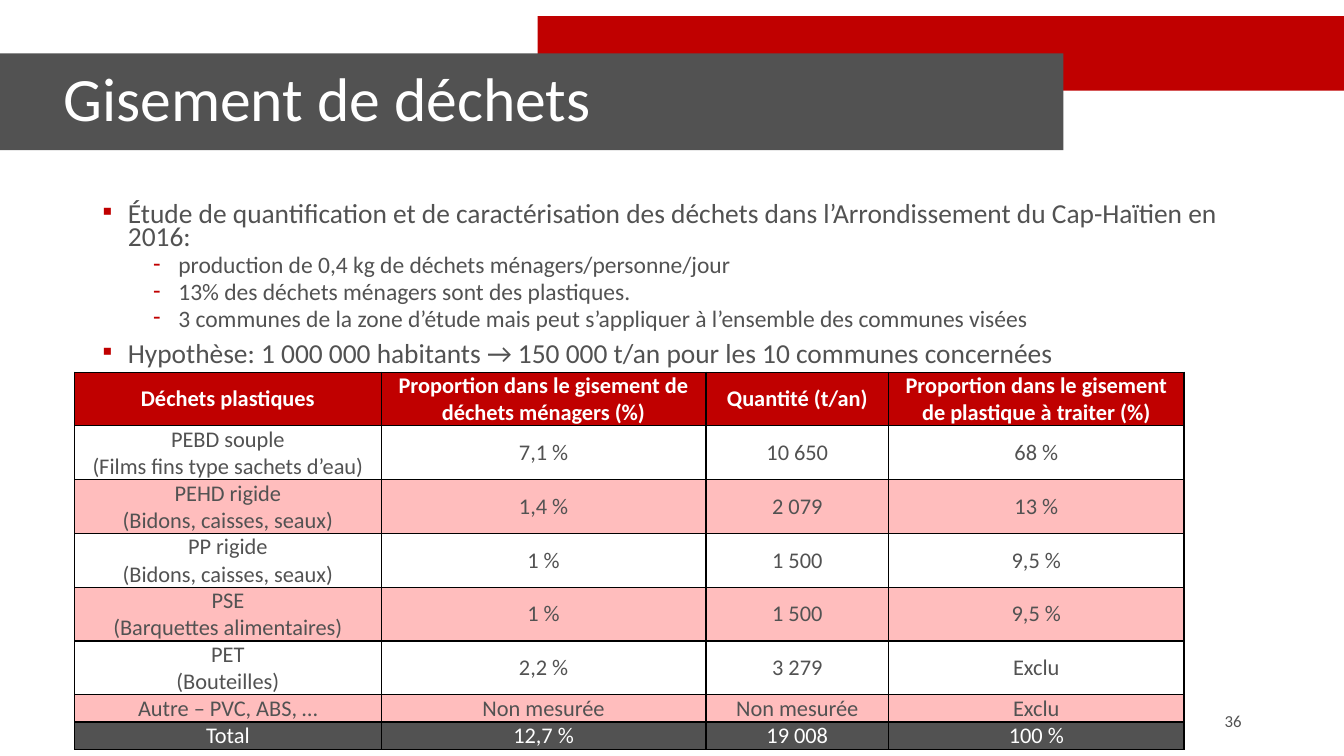
from lxml import etree
from pptx import Presentation
from pptx.dml.color import RGBColor
from pptx.enum import shapes, text
from pptx.oxml import ns
from pptx.util import Pt

RED = RGBColor(0xC0, 0x00, 0x00)
GREY = RGBColor(0x52, 0x52, 0x52)
PINK = RGBColor(0xFF, 0xBD, 0xBD)
WHITE = RGBColor(0xFF, 0xFF, 0xFF)
BLACK = RGBColor(0x00, 0x00, 0x00)
FONT = "Calibri"

TITLE = "Gisement de déchets"
PAGE_NUMBER = "36"
BULLETS = [
    (0, "Étude de quantification et de caractérisation des déchets dans l’Arrondissement du Cap-Haïtien en 2016:"),
    (1, "production de 0,4 kg de déchets ménagers/personne/jour"),
    (1, "13% des déchets ménagers sont des plastiques."),
    (1, "3 communes de la zone d’étude mais peut s’appliquer à l’ensemble des communes visées"),
    (0, "Hypothèse: 1 000 000 habitants → 150 000 t/an pour les 10 communes concernées"),
]
# Per level: bullet, left margin, font size, space before
LEVELS = [("▪", 18, 19.6, 10), ("‐", 54, 16.8, 5)]
WASTE_ROWS = [
    ("Déchets plastiques", "Proportion dans le gisement de déchets ménagers (%)",
     "Quantité (t/an)", "Proportion dans le gisement de plastique à traiter (%)"),
    ("PEBD souple\n(Films fins type sachets d’eau)", "7,1 %", "10 650", "68 %"),
    ("PEHD rigide\n(Bidons, caisses, seaux)", "1,4 %", "2 079", "13 %"),
    ("PP rigide\n(Bidons, caisses, seaux)", "1 %", "1 500", "9,5 %"),
    ("PSE\n(Barquettes alimentaires)", "1 %", "1 500", "9,5 %"),
    ("PET\n(Bouteilles)", "2,2 %", "3 279", "Exclu"),
    ("Autre – PVC, ABS, …", "Non mesurée", "Non mesurée", "Exclu"),
    ("Total", "12,7 %", "19 008", "100 %"),
]
COLUMN_WIDTHS = [219, 232, 130.5, 211]
ROW_HEIGHTS = [34.6] * 6 + [19.5] * 2
BARS = [(384, 11.5, 576, 53.3, RED), (0, 38.2, 759.6, 69.1, GREY)]


def place(shape, left, top, width, height):
    shape.left, shape.top = Pt(left), Pt(top)
    shape.width, shape.height = Pt(width), Pt(height)


def style(paragraph, size, color, bold=False):
    font = paragraph.font
    font.name, font.size, font.bold = FONT, Pt(size), bold
    font.color.rgb = color


def add_bullet(paragraph, character, margin):
    properties = paragraph._p.get_or_add_pPr()
    properties.set("marL", str(Pt(margin)))
    properties.set("indent", str(Pt(-18)))
    color = etree.SubElement(properties, ns.qn("a:buClr"))
    etree.SubElement(color, ns.qn("a:srgbClr"), val=str(RED))
    etree.SubElement(properties, ns.qn("a:buFont"), typeface=FONT)
    etree.SubElement(properties, ns.qn("a:buChar"), char=character)


def add_borders(cell):
    properties = cell._tc.get_or_add_tcPr()
    for index, side in enumerate(("lnL", "lnR", "lnT", "lnB")):
        line = etree.Element(ns.qn("a:" + side), w=str(Pt(1)))
        fill = etree.SubElement(line, ns.qn("a:solidFill"))
        etree.SubElement(fill, ns.qn("a:srgbClr"), val=str(BLACK))
        properties.insert(index, line)


def add_bars(slide):
    for *box, color in BARS:
        bar = slide.shapes.add_shape(shapes.MSO_SHAPE.RECTANGLE, *map(Pt, box))
        bar.shadow.inherit = False
        bar.fill.solid()
        bar.fill.fore_color.rgb = color
        bar.line.fill.background()
        slide.shapes.title.element.addprevious(bar.element)  # behind the title


def fill_title(title):
    place(title, 38.2, 25.2, 722, 95)
    frame = title.text_frame
    frame.text = TITLE
    frame.auto_size = text.MSO_AUTO_SIZE.NONE
    frame.vertical_anchor = text.MSO_ANCHOR.MIDDLE
    paragraph = frame.paragraphs[0]
    paragraph.alignment = text.PP_ALIGN.LEFT
    paragraph.line_spacing = 0.9
    style(paragraph, 44, WHITE)


def fill_body(body):
    place(body, 66.2, 142.6, 828, 134)
    frame = body.text_frame
    frame.text = "\n".join(line for _, line in BULLETS)
    frame.auto_size = text.MSO_AUTO_SIZE.NONE
    frame.vertical_anchor = text.MSO_ANCHOR.TOP
    for index, (paragraph, (level, _)) in enumerate(zip(frame.paragraphs, BULLETS)):
        character, margin, size, space = LEVELS[level]
        paragraph.level = level
        add_bullet(paragraph, character, margin)
        paragraph.line_spacing = 0.7
        paragraph.space_before = Pt(space if index else 0)
        style(paragraph, size, GREY)


def add_page_number(slide):
    box = slide.shapes.add_textbox(Pt(678), Pt(500.4), Pt(216), Pt(28.8))
    frame = box.text_frame
    frame.word_wrap = True
    frame.vertical_anchor = text.MSO_ANCHOR.MIDDLE
    frame.text = PAGE_NUMBER
    frame.paragraphs[0].alignment = text.PP_ALIGN.RIGHT
    style(frame.paragraphs[0], 12, GREY)


def row_colors(row):
    """Return the fill (None for no fill) and the text colour of a row."""
    if row == 0:
        return RED, WHITE
    if row == len(WASTE_ROWS) - 1:
        return GREY, WHITE
    return (None if row % 2 else PINK), GREY


def add_waste_table(slide):
    table = slide.shapes.add_table(
        len(WASTE_ROWS), len(COLUMN_WIDTHS), Pt(53.3), Pt(265.8),
        Pt(sum(COLUMN_WIDTHS)), Pt(sum(ROW_HEIGHTS))).table
    table.first_row = table.horz_banding = False
    for column, width in zip(table.columns, COLUMN_WIDTHS):
        column.width = Pt(width)
    for row, (values, height) in enumerate(zip(WASTE_ROWS, ROW_HEIGHTS)):
        table.rows[row].height = Pt(height)
        fill_color, text_color = row_colors(row)
        for column, value in enumerate(values):
            cell = table.cell(row, column)
            cell.text = value
            cell.vertical_anchor = text.MSO_ANCHOR.MIDDLE
            cell.margin_left = cell.margin_right = Pt(5)
            cell.margin_top = cell.margin_bottom = 0
            if fill_color is None:
                cell.fill.background()
            else:
                cell.fill.solid()
                cell.fill.fore_color.rgb = fill_color
            add_borders(cell)
            for paragraph in cell.text_frame.paragraphs:
                paragraph.alignment = text.PP_ALIGN.CENTER
                style(paragraph, 16, text_color, bold=row == 0)


def main():
    presentation = Presentation()
    presentation.slide_width, presentation.slide_height = Pt(960), Pt(540)
    slide = presentation.slides.add_slide(presentation.slide_layouts[1])
    add_bars(slide)
    fill_title(slide.shapes.title)
    fill_body(slide.placeholders[1])
    add_page_number(slide)
    add_waste_table(slide)
    presentation.save("out.pptx")


if __name__ == "__main__":
    main()
